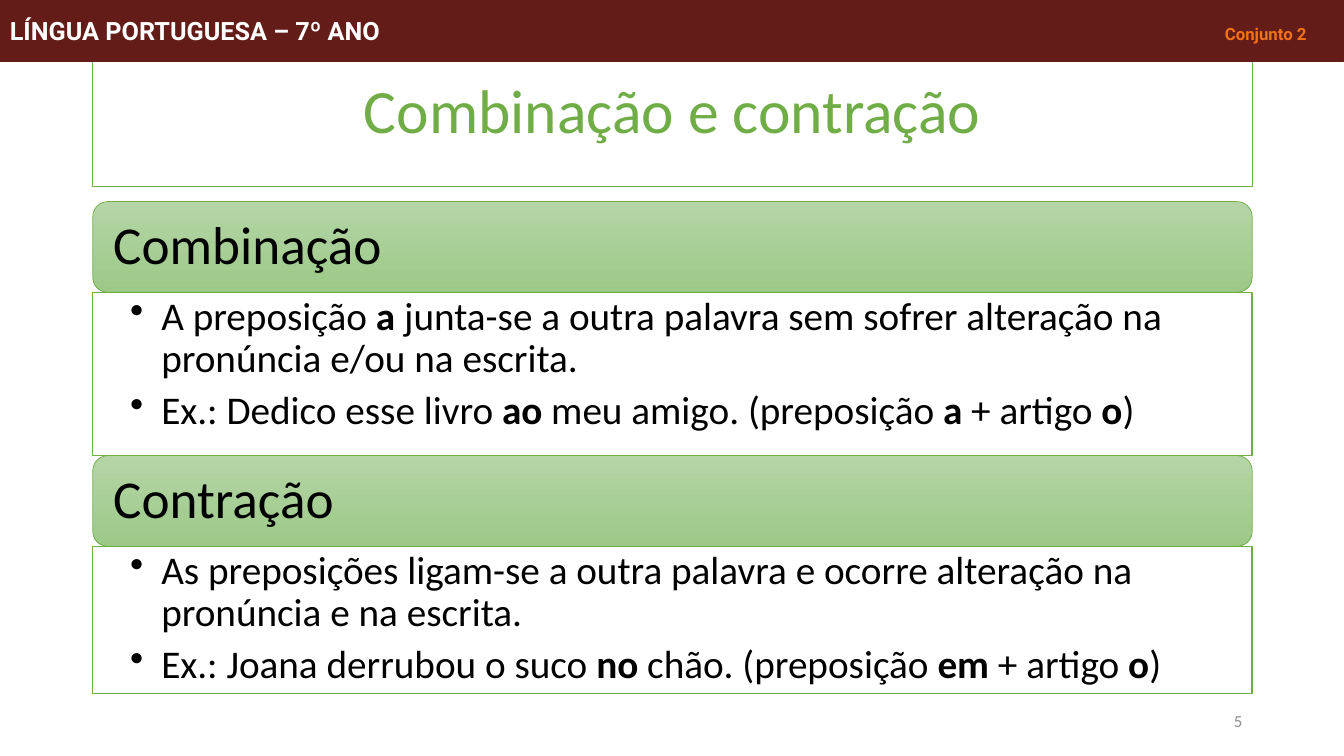
from lxml.etree import SubElement
from pptx import Presentation
from pptx.dml.color import RGBColor
from pptx.enum.shapes import MSO_SHAPE as Shape
from pptx.enum.text import MSO_ANCHOR as Anchor, PP_ALIGN as Align
from pptx.oxml.ns import qn
from pptx.util import Inches, Pt

COLORS = {
    "green": "70AD47", "light": "B5D5A7", "soft": "9CC987", "white": "FFFFFF",
    "black": "000000", "gray": "8C8C8C", "wine": "631C18", "orange": "F47116",
}
LEFT, WIDTH = 0.92, 11.5
HEADER_HEIGHT = 0.9
TOPICS = [
    (2, 1.62, "Combinação", [
        "A preposição *a* junta-se a outra palavra sem sofrer alteração na pronúncia e/ou na escrita.",
        "Ex.: Dedico esse livro *ao *meu amigo. (preposição *a *+ artigo *o*)",
    ]),
    (4.52, 1.46, "Contração", [
        "As preposições ligam-se a outra palavra e ocorre alteração na pronúncia e na escrita.",
        "Ex.: Joana derrubou o suco *no *chão. (preposição *em *+ artigo *o*)",
    ]),
]


class LessonSlide:
    """Draws the parts of a grammar lesson slide in one shared style."""

    def __init__(self, slide, font="Calibri"):
        self.slide = slide
        self.font = font

    def color(self, name):
        return RGBColor.from_string(COLORS[name])

    def box(self, kind, top, height, line, weight, fill=None, left=LEFT, width=WIDTH):
        box = self.slide.shapes.add_shape(
            kind, Inches(left), Inches(top), Inches(width), Inches(height))
        box.shadow.inherit = False
        box.line.color.rgb = self.color(line)
        box.line.width = Pt(weight)
        if fill:
            box.fill.solid()
            box.fill.fore_color.rgb = self.color(fill)
        else:
            box.fill.background()
        return box

    def frame(self, box, anchor=Anchor.MIDDLE, insets=(0.1, 0.05, 0.1, 0.05)):
        frame = box.text_frame
        frame.word_wrap = True
        frame.vertical_anchor = anchor
        (frame.margin_left, frame.margin_top,
         frame.margin_right, frame.margin_bottom) = map(Inches, insets)
        return frame

    def style(self, paragraph, size, color, align=Align.LEFT, spacing=0.9):
        paragraph.alignment = align
        paragraph.line_spacing = spacing
        paragraph.font.name = self.font
        paragraph.font.size = Pt(size)
        paragraph.font.color.rgb = self.color(color)

    def title(self, text):
        frame = self.frame(self.box(Shape.RECTANGLE, 0.4, 1.45, "green", 0.75))
        frame.text = text
        self.style(frame.paragraphs[0], 44, "green", Align.CENTER)

    def topic_header(self, top, text):
        header = self.box(Shape.ROUNDED_RECTANGLE, top, HEADER_HEIGHT, "green", 0.5)
        header.fill.gradient()
        header.fill.gradient_angle = 270
        for stop, shade in zip(header.fill.gradient_stops, ("light", "soft")):
            stop.color.rgb = self.color(shade)
        frame = self.frame(header, insets=(0.16,) * 4)
        frame.text = text
        self.style(frame.paragraphs[0], 38, "black")

    def topic_body(self, top, height, items):
        body = self.box(Shape.RECTANGLE, top, height, "green", 1, "white")
        frame = self.frame(body, Anchor.TOP, (0.37, 0.04, 0.22, 0.04))
        for index, item in enumerate(items):
            paragraph = frame.add_paragraph() if index else frame.paragraphs[0]
            self.bullet(paragraph, item)

    def bullet(self, paragraph, item):
        paragraph.level = 1
        self.style(paragraph, 28, "black")
        paragraph.space_after = Pt(6.5)
        properties = paragraph._p.get_or_add_pPr()
        properties.set("marL", str(Inches(0.31)))
        properties.set("indent", str(-Inches(0.31)))
        mark = properties.makeelement(qn("a:buChar"), {"char": "•"})
        properties.find(qn("a:defRPr")).addprevious(mark)
        for position, part in enumerate(item.split("*")):
            run = paragraph.add_run()
            run.text = part
            run.font.bold = position % 2 == 1

    def page_number(self, number):
        page = self.slide.shapes.add_textbox(
            Inches(9.42), Inches(6.95), Inches(3), Inches(0.4))
        frame = self.frame(page)
        frame.text = number
        self.style(frame.paragraphs[0], 12, "gray", Align.RIGHT, 1)

    def banner(self, subject, unit):
        banner = self.box(Shape.RECTANGLE, 0, 0.61, "wine", 0.75, "wine", 0, 13.33)
        paragraph = self.frame(banner).paragraphs[0]
        paragraph.alignment = Align.LEFT
        tabs = SubElement(paragraph._p.get_or_add_pPr(), qn("a:tabLst"))
        SubElement(tabs, qn("a:tab"), pos=str(Inches(12.05)), algn="l")
        for text, size, color in ((subject + "\t", 18, "white"), (unit, 12, "orange")):
            run = paragraph.add_run()
            run.text = text
            run.font.name = "Roboto"
            run.font.bold = True
            run.font.size = Pt(size)
            run.font.color.rgb = self.color(color)


def main():
    deck = Presentation()
    deck.slide_width, deck.slide_height = Inches(13.33), Inches(7.5)
    lesson = LessonSlide(deck.slides.add_slide(deck.slide_layouts[6]))
    for top, body_height, heading, items in TOPICS:
        lesson.topic_header(top, heading)
        lesson.topic_body(top + HEADER_HEIGHT, body_height, items)
    lesson.title("Combinação e contração")
    lesson.page_number("5")
    lesson.banner("LÍNGUA PORTUGUESA – 7º ANO", "Conjunto 2")
    deck.save("out.pptx")


if __name__ == "__main__":
    main()
